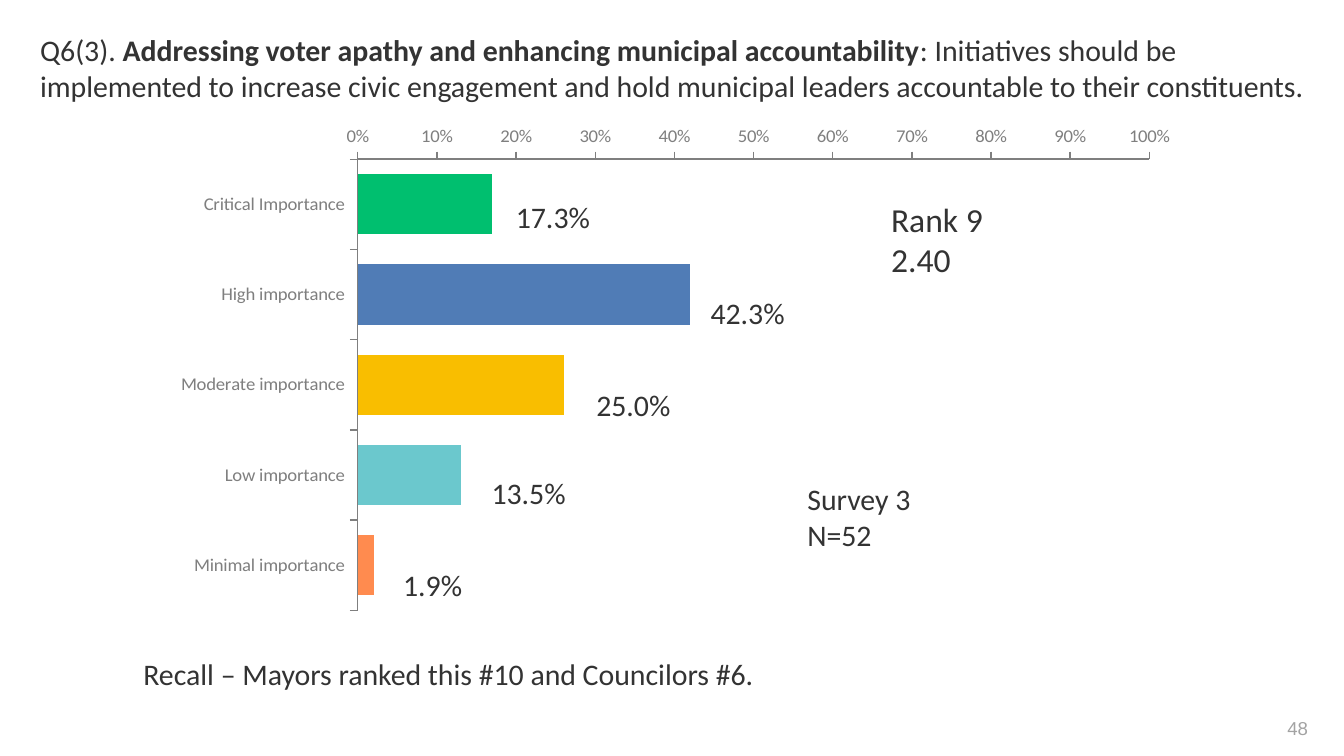
from dataclasses import dataclass

from lxml.etree import SubElement
from pptx import Presentation
from pptx.chart.data import CategoryChartData
from pptx.dml.color import RGBColor
from pptx.enum.chart import (XL_AXIS_CROSSES, XL_CHART_TYPE,
                             XL_TICK_LABEL_POSITION, XL_TICK_MARK)
from pptx.enum.text import MSO_ANCHOR, PP_ALIGN
from pptx.oxml.ns import qn
from pptx.util import Cm, Pt

COLORS = {
    "text": "333333", "axis": "7F7F7F", "page": "A3A3A3",
    "critical": "00BF6F", "high": "507CB6", "moderate": "F9BE00",
    "low": "6BC8CD", "minimal": "FF8B4F",
}


@dataclass
class Bar:
    name: str
    value: float
    color: str
    label: str
    label_x: float
    label_y: float


@dataclass
class Note:
    text: str
    x: float
    y: float
    w: float
    h: float
    size: int = 16
    font: str = "Calibri"
    color: str = "text"
    wrap: bool = True


BARS = [
    Bar("Critical Importance", 0.17, "critical", "17.3%", 9.5, 3.63),
    Bar("High importance", 0.42, "high", "42.3%", 13.18, 5.44),
    Bar("Moderate importance", 0.26, "moderate", "25.0%", 11.02, 7.19),
    Bar("Low importance", 0.13, "low", "13.5%", 9.04, 8.84),
    Bar("Minimal importance", 0.02, "minimal", "1.9%", 7.37, 10.59),
]
TITLE = Note("Q6(3). ", 0.51, 0.48, 24.56, 1.63)
TITLE_BOLD = "Addressing voter apathy and enhancing municipal accountability"
TITLE_REST = (": Initiatives should be implemented to increase civic engagement "
              "and hold municipal leaders accountable to their constituents.")
PAGE = Note("48", 23.24, 13.39, 1.73, 0.76, 10, "Arial", "page")
NOTES = [
    Note("Survey 3\nN=52", 15.01, 8.97, 3.1, 1.63),
    Note("Rank 9\n2.40", 16.59, 3.63, 2.69, 1.8, 18),
    Note("Recall – Mayors ranked this #10 and Councilors #6.",
         2.46, 12.27, 12.27, 0.94, wrap=False),
]
# Plot area as fractions of the chart frame
PLOT = {"x": 0.19, "y": 0.02, "w": 0.77, "h": 0.9}


def rgb(name: str) -> RGBColor:
    return RGBColor.from_string(COLORS[name])


def style_font(font, size: int, color: str, face: str = "Calibri") -> None:
    font.size, font.name = Pt(size), face
    font.color.rgb = rgb(color)


def add_note(s, note: Note):
    sp = s.shapes.add_textbox(Cm(note.x), Cm(note.y), Cm(note.w), Cm(note.h))
    tf = sp.text_frame
    tf.word_wrap = note.wrap
    tf.text = note.text
    for p in tf.paragraphs:
        for r in p.runs:
            style_font(r.font, note.size, note.color, note.font)
    return tf


def add_title(s) -> None:
    p = add_note(s, TITLE).paragraphs[0]
    for text, bold in ((TITLE_BOLD, True), (TITLE_REST, False)):
        r = p.add_run()
        r.text = text
        style_font(r.font, TITLE.size, TITLE.color)
        r.font.bold = bold


def style_axis(axis) -> None:
    axis.has_major_gridlines = False
    axis.major_tick_mark = XL_TICK_MARK.OUTSIDE
    axis.minor_tick_mark = XL_TICK_MARK.NONE
    axis.format.line.color.rgb = rgb("axis")
    axis.format.line.width = Pt(0.75)
    style_font(axis.tick_labels.font, 10, "axis")


def set_plot_layout(chart) -> None:
    area = chart.plots[0]._element.getparent()
    layout = area.find(qn("c:layout"))
    if layout is None:
        layout = SubElement(area, qn("c:layout"))
        area.insert(0, layout)
    manual = SubElement(layout, qn("c:manualLayout"))
    settings = {"layoutTarget": "inner", "xMode": "edge", "yMode": "edge", **PLOT}
    for tag, value in settings.items():
        SubElement(manual, qn(f"c:{tag}")).set("val", str(value))


def add_bar_chart(s) -> None:
    data = CategoryChartData(number_format="0%")
    data.categories = [bar.name for bar in BARS]
    data.add_series("Series 1", [bar.value for bar in BARS])
    chart = s.shapes.add_chart(XL_CHART_TYPE.BAR_CLUSTERED, Cm(3.07), Cm(2.39),
                               Cm(19.43), Cm(9.91), data).chart
    chart.has_legend = chart.has_title = False
    style_font(chart.font, 18, "text")

    # Bars
    plot = chart.plots[0]
    plot.gap_width, plot.overlap, plot.vary_by_categories = 50, 100, False
    series = plot.series[0]
    series.format.fill.solid()
    series.format.fill.fore_color.rgb = rgb(BARS[0].color)
    for i, bar in enumerate(BARS):
        fill = series.points[i].format.fill
        fill.solid()
        fill.fore_color.rgb = rgb(bar.color)

    # Axes: first category on top, percentages at the bottom
    cat, val = chart.category_axis, chart.value_axis
    style_axis(cat)
    style_axis(val)
    cat.reverse_order = True
    cat.crosses = XL_AXIS_CROSSES.MAXIMUM
    cat.tick_label_position = XL_TICK_LABEL_POSITION.LOW
    val.minimum_scale, val.maximum_scale, val.major_unit = 0, 1, 0.1
    val.tick_labels.number_format = "0%"
    val.tick_labels.number_format_is_linked = False
    set_plot_layout(chart)


def main() -> None:
    prs = Presentation()
    prs.slide_width, prs.slide_height = Cm(25.4), Cm(14.29)
    s = prs.slides.add_slide(prs.slide_layouts[6])

    # Page number
    tf = add_note(s, PAGE)
    tf.vertical_anchor = MSO_ANCHOR.MIDDLE
    tf.paragraphs[0].alignment = PP_ALIGN.RIGHT

    # Question and chart
    add_title(s)
    add_bar_chart(s)

    # Bar labels and remarks
    for bar in BARS:
        add_note(s, Note(bar.label, bar.label_x, bar.label_y, 2.41, 0.94))
    for note in NOTES:
        add_note(s, note)

    prs.save("out.pptx")


if __name__ == "__main__":
    main()
